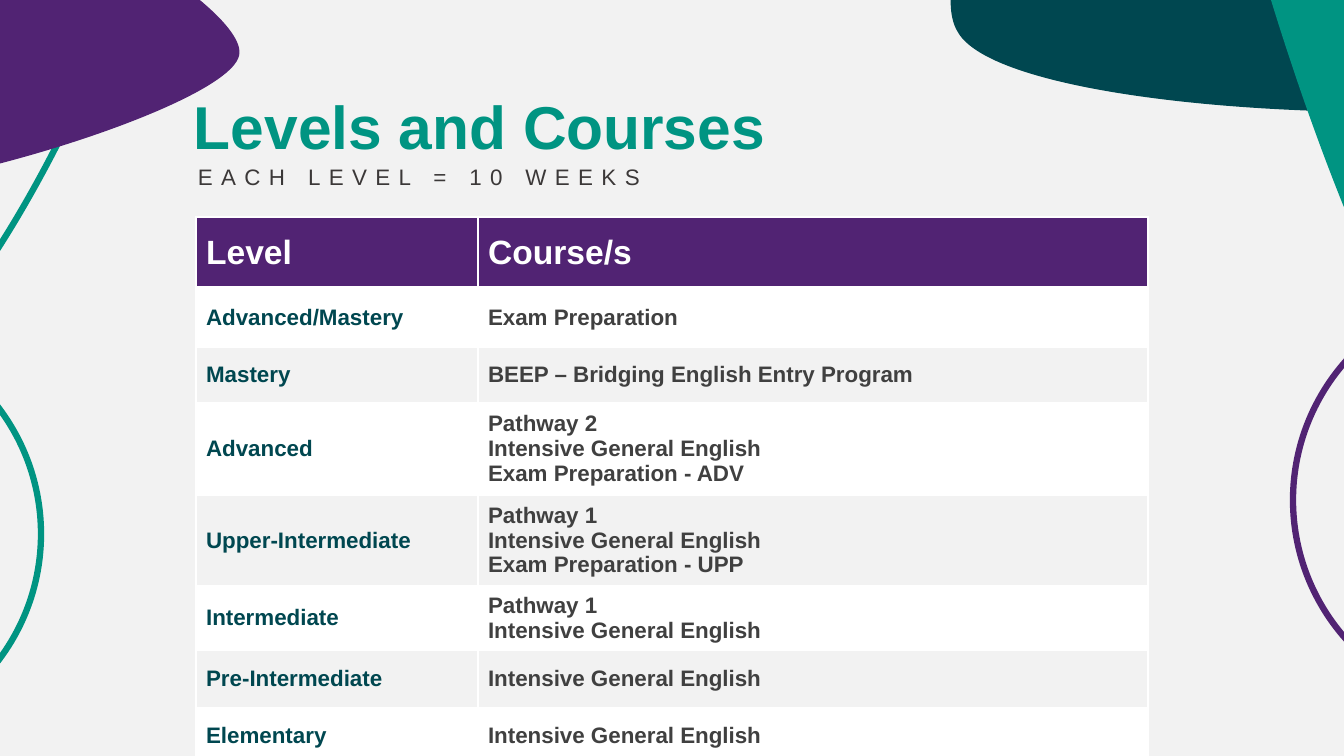
"""Build the Levels and Courses slide."""
from lxml import etree
from pptx import Presentation
from pptx.dml.color import RGBColor
from pptx.enum import shapes, text
from pptx.oxml.ns import qn

PX = 914400 / 100.8
TEAL, DARK, PURPLE = "009482", "004750", "512373"
WHITE, PALE, GREY = "FFFFFF", "F2F2F2", "404040"


def rgb(value):
    return RGBColor.from_string(value)


def write(tf, words, size, color, bold=False, leading=None, tracking=None):
    tf.word_wrap = True
    for i, line in enumerate(words.split("\n")):
        p = tf.add_paragraph() if i else tf.paragraphs[0]
        p.line_spacing = leading
        r = p.add_run()
        r.text = line
        r.font.name, r.font.size = "Arial", int(size * 12700)
        r.font.bold, r.font.color.rgb = bold, rgb(color)
        if tracking:
            r.font._element.set("spc", str(tracking * 100))


prs = Presentation()
prs.slide_width, prs.slide_height = round(1344 * PX), round(756 * PX)
s = prs.slides.add_slide(prs.slide_layouts[6])
s.background.fill.solid()
s.background.fill.fore_color.rgb = rgb(PALE)

blobs = [
    (DARK, True, (1760, 45), [
        (1828, -49), (1504, -533), (1371, -535),
        (1237, -537), (893, -62), (959, 34),
        (1023, 131), (1691, 141)]),
    (TEAL, False, (-457, -36), [
        (-500, 54), (-217, 392), (-117, 369),
        (-17, 346), (202, -109), (144, -175),
        (88, -243), (-413, -128)]),
    (TEAL, True, (1444, 378), [
        (1510, 386), (1644, -145), (1605, -260),
        (1566, -374), (1239, -414), (1213, -308),
        (1186, -203), (1379, 370)]),
    (PURPLE, True, (-111, -137), [
        (-183, -116), (-255, 152), (-197, 184),
        (-138, 217), (225, 111), (239, 56),
        (253, 3), (-38, -158)]),
]
for color, filled, start, controls in blobs:
    builder = s.shapes.build_freeform(*start, scale=PX)
    builder.add_line_segments(controls + [start], close=True)
    sp = builder.convert_to_shape()
    sp.shadow.inherit = False
    if filled:
        sp.fill.solid()
        sp.fill.fore_color.rgb = rgb(color)
        sp.line.fill.background()
    else:
        sp.fill.background()
        sp.line.color.rgb = rgb(color)
        sp.line.width = int(4.5 * 12700)
    outline = sp._element.find(".//" + qn("a:path"))
    segments = outline.findall(qn("a:lnTo"))
    for i in range(0, len(segments), 3):
        curve = etree.Element(qn("a:cubicBezTo"))
        segments[i].addprevious(curve)
        for segment in segments[i:i + 3]:
            curve.append(segment[0])
            outline.remove(segment)

for color, x, y in [(TEAL, -377, 325), (PURPLE, 1293, 291)]:
    sp = s.shapes.add_shape(shapes.MSO_SHAPE.OVAL, *[round(v * PX) for v in (x, y, 418, 418)])
    sp.shadow.inherit = False
    sp.fill.background()
    sp.line.color.rgb = rgb(color)
    sp.line.width = int(4.5 * 12700)

headings = [
    ((184, 86, 595, 88), "Levels and Courses", dict(size=43.2, color=TEAL, bold=True)),
    ((188, 158, 900, 40), "EACH LEVEL = 10 WEEKS", dict(size=16, color="3B3838", tracking=6)),
]
for box, words, style in headings:
    tf = s.shapes.add_textbox(*[round(v * PX) for v in box]).text_frame
    tf.vertical_anchor = text.MSO_ANCHOR.MIDDLE
    write(tf, words, leading=0.9, **style)

rows = [
    (71, "Level", "Course/s"),
    (59, "Advanced/Mastery", "Exam Preparation"),
    (56, "Mastery", "BEEP – Bridging English Entry Program"),
    (92, "Advanced", "Pathway 2\nIntensive General English\nExam Preparation - ADV"),
    (89, "Upper-Intermediate", "Pathway 1\nIntensive General English\nExam Preparation - UPP"),
    (65, "Intermediate", "Pathway 1\nIntensive General English"),
    (57, "Pre-Intermediate", "Intensive General English"),
    (57, "Elementary", "Intensive General English"),
]
frame = [round(v * PX) for v in (196, 217, 952, sum(row[0] for row in rows))]
table = s.shapes.add_table(len(rows), 2, *frame).table
for column, width in zip(table.columns, (282, 670)):
    column.width = round(width * PX)
for i, (height, *words) in enumerate(rows):
    table.rows[i].height = round(height * PX)
    for j, word in enumerate(words):
        cell = table.cell(i, j)
        cell.vertical_anchor = text.MSO_ANCHOR.MIDDLE
        tcPr = cell._tc.get_or_add_tcPr()
        for side in ("lnL", "lnR", "lnT", "lnB"):
            weight = 3 if (i, side) in ((0, "lnB"), (1, "lnT")) else 1
            ln = etree.SubElement(tcPr, qn("a:" + side), w=str(weight * 12700))
            fill = etree.SubElement(ln, qn("a:solidFill"))
            etree.SubElement(fill, qn("a:srgbClr"), val=WHITE)
        cell.fill.solid()
        if i == 0:
            cell.fill.fore_color.rgb = rgb(PURPLE)
            write(cell.text_frame, word, 24, WHITE, bold=True)
        else:
            cell.fill.fore_color.rgb = rgb(WHITE if i % 2 else PALE)
            write(cell.text_frame, word, 16, GREY if j else DARK, bold=True)

prs.save("out.pptx")
